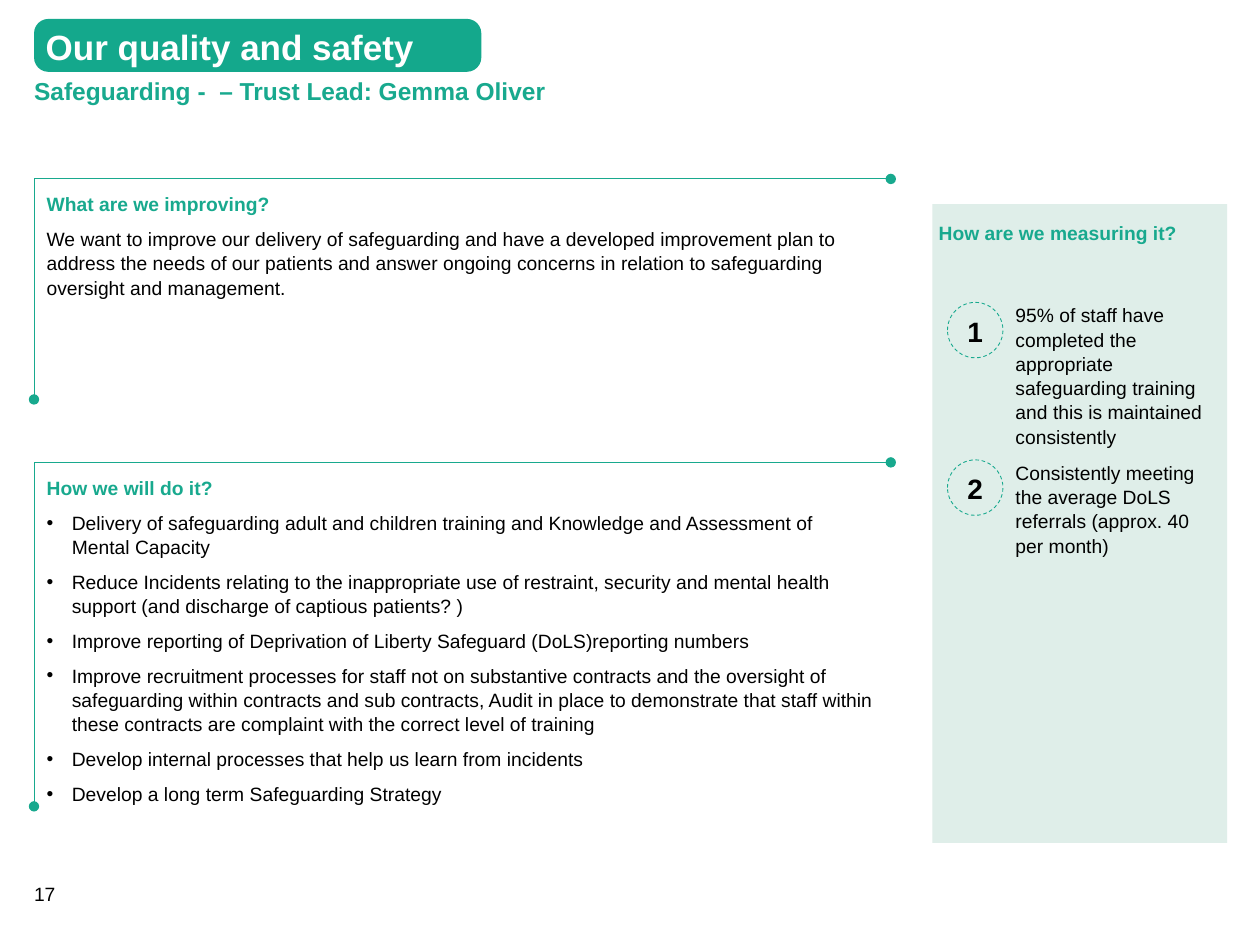
from lxml.etree import SubElement
from pptx import Presentation
from pptx.dml.color import RGBColor
from pptx.enum.dml import MSO_LINE_DASH_STYLE as DASH
from pptx.enum.shapes import MSO_SHAPE as SHAPE
from pptx.enum.text import MSO_ANCHOR as ANCHOR, MSO_AUTO_SIZE as FIT, PP_ALIGN as ALIGN
from pptx.oxml.ns import qn
from pptx.util import Inches, Pt

GREEN, PALE, BLACK, WHITE = "18A98E", "DFEEE9", "000000", "FFFFFF"
LEFT = 0.27
PANEL_WIDTH = 6.8
PAD = 0.1

AIM = ("We want to improve our delivery of safeguarding and have a developed improvement plan to "
       "address the needs of our patients and answer ongoing concerns in relation to safeguarding "
       "oversight and management.")
ACTIONS = [
    "Delivery of safeguarding adult and children training and Knowledge and Assessment of\vMental Capacity",
    "Reduce Incidents relating to the inappropriate use of restraint, security and mental health "
    "support (and discharge of captious patients? )",
    "Improve reporting of Deprivation of Liberty Safeguard (DoLS)reporting numbers",
    "Improve recruitment processes for staff not on substantive contracts and the oversight of "
    "safeguarding within contracts and sub contracts, Audit in place to demonstrate that staff "
    "within these contracts are complaint with the correct level of training",
    "Develop internal processes that help us learn from incidents",
    "Develop a long term Safeguarding Strategy",
]
MEASURES = [
    (0.78, 1.65, "95% of staff have completed the appropriate safeguarding training and this is "
                 "maintained consistently"),
    (2.03, 0.74, "Consistently meeting the average DoLS referrals (approx. 40 per month)"),
]


def colour(value):
    """Turn a hex string into a colour."""
    return RGBColor.from_string(value)


def inches(*lengths):
    """Turn lengths in inches into slide units."""
    return [Inches(length) for length in lengths]


def place(shape, box):
    """Move a shape into a left, top, width, height box."""
    shape.left, shape.top, shape.width, shape.height = inches(*box)
    return shape


def set_bullet(para, bulleted):
    """Give a paragraph a hanging bullet, or clear an inherited one."""
    props = para._p.get_or_add_pPr()
    indent = Inches(0.2) if bulleted else 0
    props.set("marL", str(indent))
    props.set("indent", str(-indent))
    if bulleted:
        SubElement(props, qn("a:buFont")).set("typeface", "Arial")
        SubElement(props, qn("a:buChar")).set("char", "•")
    else:
        SubElement(props, qn("a:buNone"))


def write(shape, lines, size=11, ink=BLACK, bold=False, align=ALIGN.LEFT,
          anchor=ANCHOR.TOP, margin=0, heading=False, bulleted=False):
    """Fill a shape with paragraphs, the first optionally a green heading."""
    frame = shape.text_frame
    frame.word_wrap = True
    frame.auto_size = FIT.NONE
    frame.vertical_anchor = anchor
    frame.margin_left = frame.margin_right = Inches(margin)
    frame.margin_top = frame.margin_bottom = Inches(margin)
    frame.text = lines[0]
    for line in lines[1:]:
        frame.add_paragraph().text = line
    for index, para in enumerate(frame.paragraphs):
        is_heading = heading and index == 0
        set_bullet(para, bulleted and not is_heading)
        para.alignment = align
        para.line_spacing = 1.05
        para.space_before = Pt(0)
        para.space_after = Pt(6 if index < len(lines) - 1 else 0)
        for span in para.runs:
            span.font.name = "Arial"
            span.font.size = Pt(size)
            span.font.bold = bold or is_heading
            span.font.color.rgb = colour(GREEN if is_heading else ink)


def add_filled(page, kind, box, fill, dashed=False):
    """Add a flat preset shape, optionally with a dashed green outline."""
    shape = page.shapes.add_shape(kind, *inches(*box))
    shape.shadow.inherit = False
    shape.fill.solid()
    shape.fill.fore_color.rgb = colour(fill)
    if dashed:
        shape.line.color.rgb = colour(GREEN)
        shape.line.width = Pt(0.5)
        shape.line.dash_style = DASH.DASH
    else:
        shape.line.fill.background()
    return shape


def add_header(page, box):
    """Add the section tab and the slide title beneath it."""
    left, top, width, height = box
    tab = add_filled(page, SHAPE.ROUNDED_RECTANGLE, (left, top, 3.55, 0.42), "14A88C")
    tab.adjustments[0] = 0.27
    write(tab, ["Our quality and safety"], 20, WHITE, True, anchor=ANCHOR.MIDDLE, margin=0.06)
    title = place(page.shapes.title, (left, top + height - 0.24, width, 0.24))
    write(title, ["Safeguarding -  – Trust Lead: Gemma Oliver"], 14, GREEN, True,
          anchor=ANCHOR.MIDDLE)


def add_panel(page, box, holder, lines, bulleted=False):
    """Add text beside a corner line that ends in dots."""
    left, top, width, height = box
    builder = page.shapes.build_freeform(*inches(left, top + height))
    builder.add_line_segments([inches(left, top), inches(left + width, top)], close=False)
    corner = builder.convert_to_shape()
    corner.shadow.inherit = False
    corner.fill.background()
    corner.line.color.rgb = colour(GREEN)
    corner.line.width = Pt(0.5)
    for end in ("a:headEnd", "a:tailEnd"):
        SubElement(corner.line._get_or_add_ln(), qn(end)).set("type", "oval")
    place(holder, (left + PAD, top + PAD, width - 0.13, height - 2 * PAD))
    write(holder, lines, heading=True, bulleted=bulleted)


def add_measures(page, box):
    """Add the shaded column of numbered measures."""
    left, top, width, height = box
    add_filled(page, SHAPE.RECTANGLE, box, PALE)
    heading = page.shapes.add_textbox(*inches(left + 0.05, top + 0.13, width - 0.17, 0.2))
    write(heading, ["How are we measuring it?"], ink=GREEN, bold=True)
    for number, (offset, text_height, text) in enumerate(MEASURES, 1):
        row = top + offset
        badge = add_filled(page, SHAPE.OVAL, (left + 0.12, row, 0.44, 0.44), PALE, True)
        write(badge, [str(number)], 16, bold=True, align=ALIGN.CENTER, anchor=ANCHOR.MIDDLE)
        label = add_filled(page, SHAPE.RECTANGLE, (left + 0.66, row, 1.53, text_height), PALE)
        write(label, [text])


def main():
    """Build and save the deck."""
    deck = Presentation()
    deck.slide_width, deck.slide_height = inches(10, 7.5)
    page = deck.slides.add_slide(deck.slide_layouts[1])
    add_header(page, (LEFT, 0.15, 7.22, 0.68))
    aim = page.shapes.add_textbox(*inches(0, 0, 1, 1))
    add_panel(page, (LEFT, 1.42, PANEL_WIDTH, 1.75), aim, ["What are we improving?", AIM])
    add_panel(page, (LEFT, 3.67, PANEL_WIDTH, 2.73), page.placeholders[1],
              ["How we will do it?", *ACTIONS], bulleted=True)
    add_measures(page, (7.4, 1.62, 2.34, 5.07))
    number = page.shapes.add_textbox(*inches(LEFT, 6.99, 0.55, 0.19))
    write(number, ["17"])
    deck.save("out.pptx")


if __name__ == "__main__":
    main()
